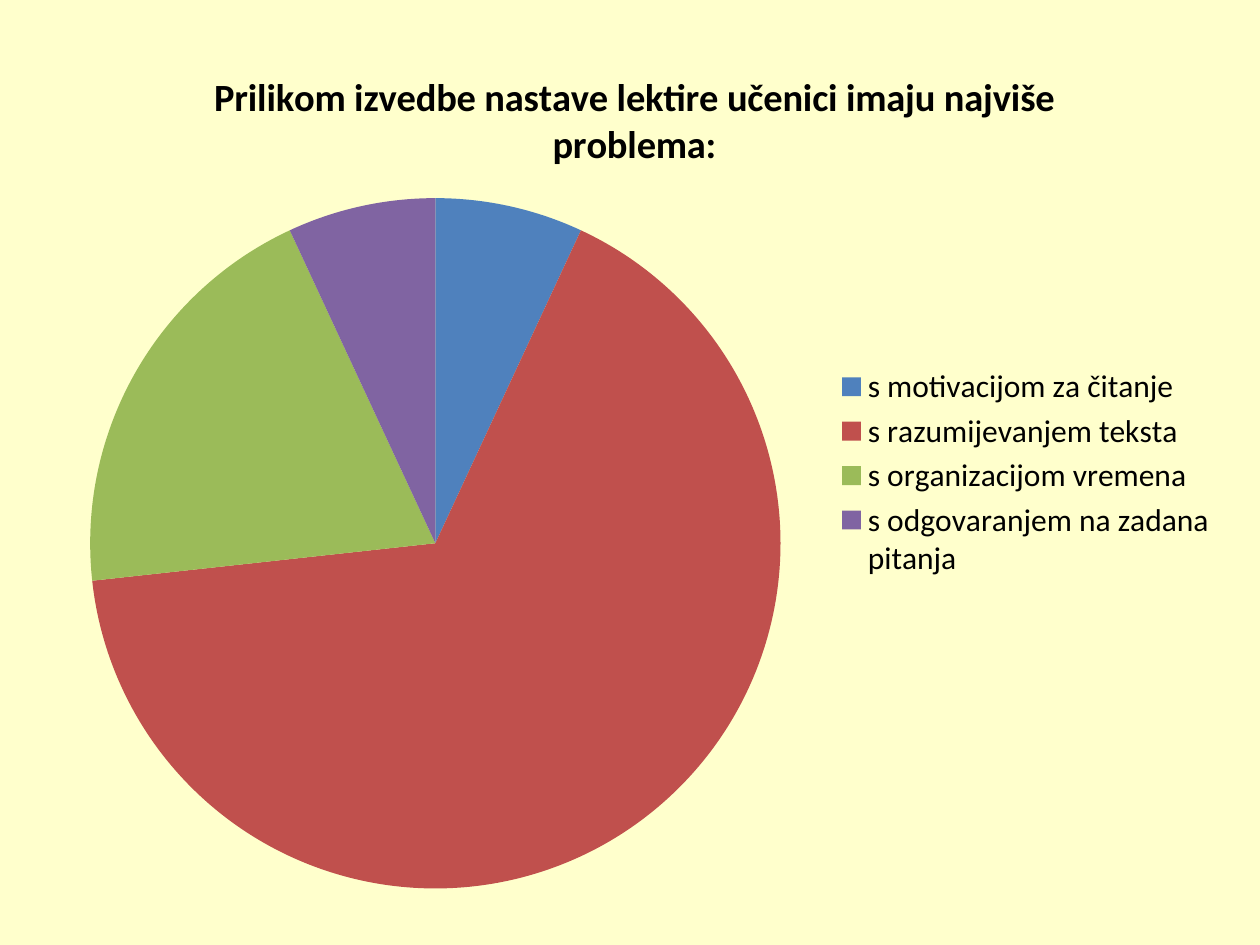
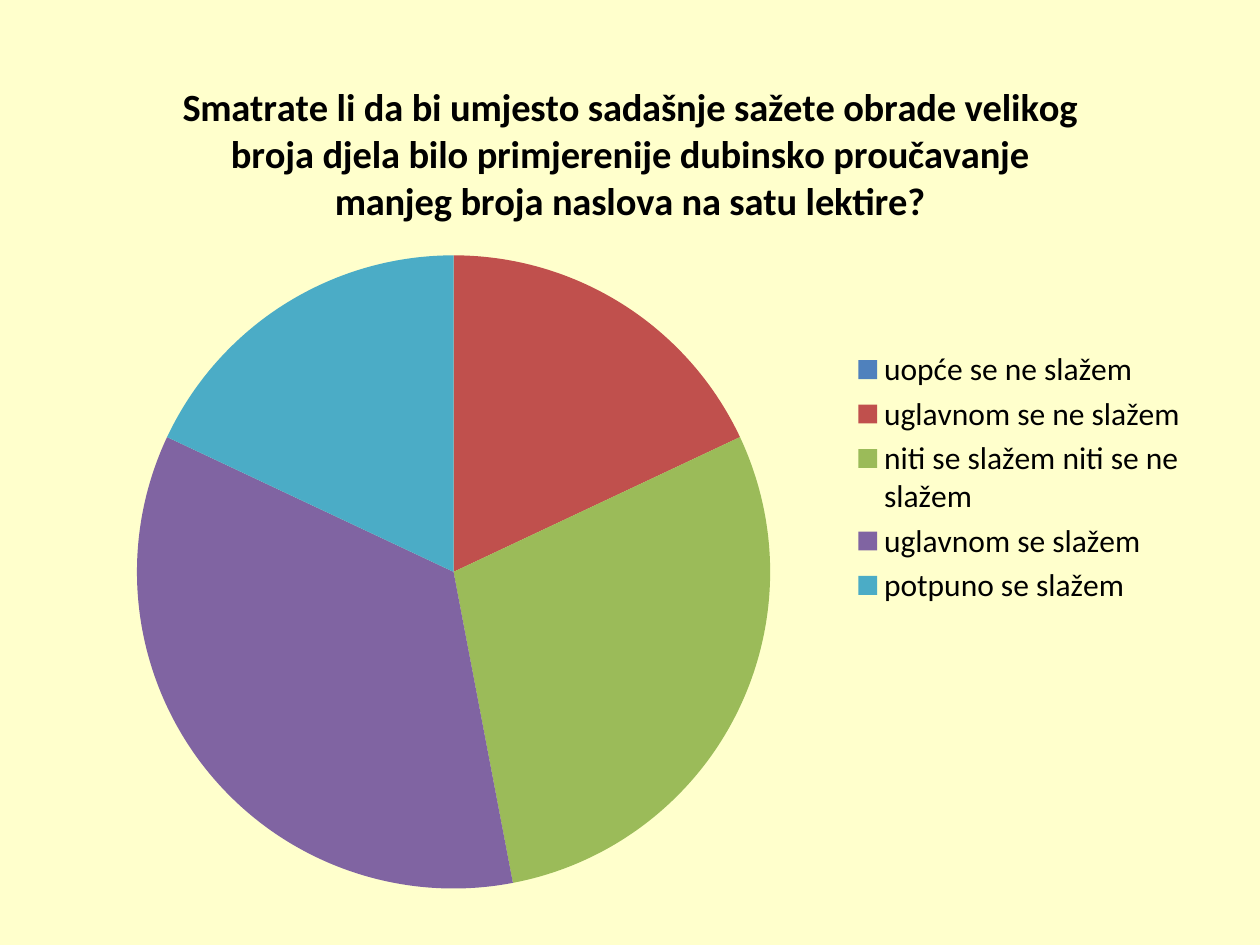
from pptx import Presentation
from pptx.chart.data import CategoryChartData
from pptx.dml.color import RGBColor
from pptx.enum import chart as ch
from pptx.util import Inches, Pt

CREAM = RGBColor(0xFF, 0xFF, 0xCC)
BLACK = RGBColor(0, 0, 0)
BLUE = RGBColor(0x4F, 0x81, 0xBD)
RED = RGBColor(0xC0, 0x50, 0x4D)
GREEN = RGBColor(0x9B, 0xBB, 0x59)
PURPLE = RGBColor(0x80, 0x64, 0xA2)
TEAL = RGBColor(0x4B, 0xAC, 0xC6)
SLICES = (BLUE, RED, GREEN, PURPLE, TEAL)


class Deck:
    font = "Calibri"
    title_size = Pt(22)
    legend_size = Pt(18)

    def __init__(self):
        self.prs = Presentation()
        self.prs.slide_width, self.prs.slide_height = Inches(10), Inches(7.5)
        self.s = None

    def slide(self):
        self.s = self.prs.slides.add_slide(self.prs.slide_layouts[6])
        fill = self.s.background.fill
        fill.solid()
        fill.fore_color.rgb = CREAM

    def style(self, font, size, bold=False):
        font.name, font.size, font.bold = self.font, size, bold
        font.color.rgb = BLACK

    def pie(self, question, answers, area):
        """Add a titled pie; area is left, top, width, height in inches."""
        data = CategoryChartData(number_format="0")
        data.categories = list(answers)
        data.add_series(question, list(answers.values()))
        chart = self.s.shapes.add_chart(
            ch.XL_CHART_TYPE.PIE, *map(Inches, area), data).chart
        self.style(chart.font, self.legend_size)

        chart.has_title = True
        tf = chart.chart_title.text_frame
        tf.text = question
        self.style(tf.paragraphs[0].runs[0].font, self.title_size, bold=True)

        chart.has_legend = True
        chart.legend.position = ch.XL_LEGEND_POSITION.RIGHT
        chart.legend.include_in_layout = False
        self.style(chart.legend.font, self.legend_size)

        plot = chart.plots[0]
        plot.vary_by_categories = True
        for i, colour in zip(range(len(answers)), SLICES):
            fill = plot.series[0].points[i].format.fill
            fill.solid()
            fill.fore_color.rgb = colour


def main():
    deck = Deck()

    deck.slide()
    deck.pie("Prilikom izvedbe nastave lektire učenici imaju najviše problema:",
             {"s motivacijom za čitanje": 7,
              "s razumijevanjem teksta": 67,
              "s organizacijom vremena": 20,
              "s odgovaranjem na zadana pitanja": 7},
             (0.31, 0.31, 9.45, 6.88))

    deck.slide()
    deck.pie("Smatrate li da bi umjesto sadašnje sažete obrade velikog broja "
             "djela bilo primjerenije dubinsko proučavanje manjeg broja "
             "naslova na satu lektire?",
             {"uopće se ne slažem": 0,
              "uglavnom se ne slažem": 18,
              "niti se slažem niti se ne slažem": 29,
              "uglavnom se slažem": 35,
              "potpuno se slažem": 18},
             (0.47, 0.39, 9.06, 6.8))

    deck.prs.save("out.pptx")


if __name__ == "__main__":
    main()
